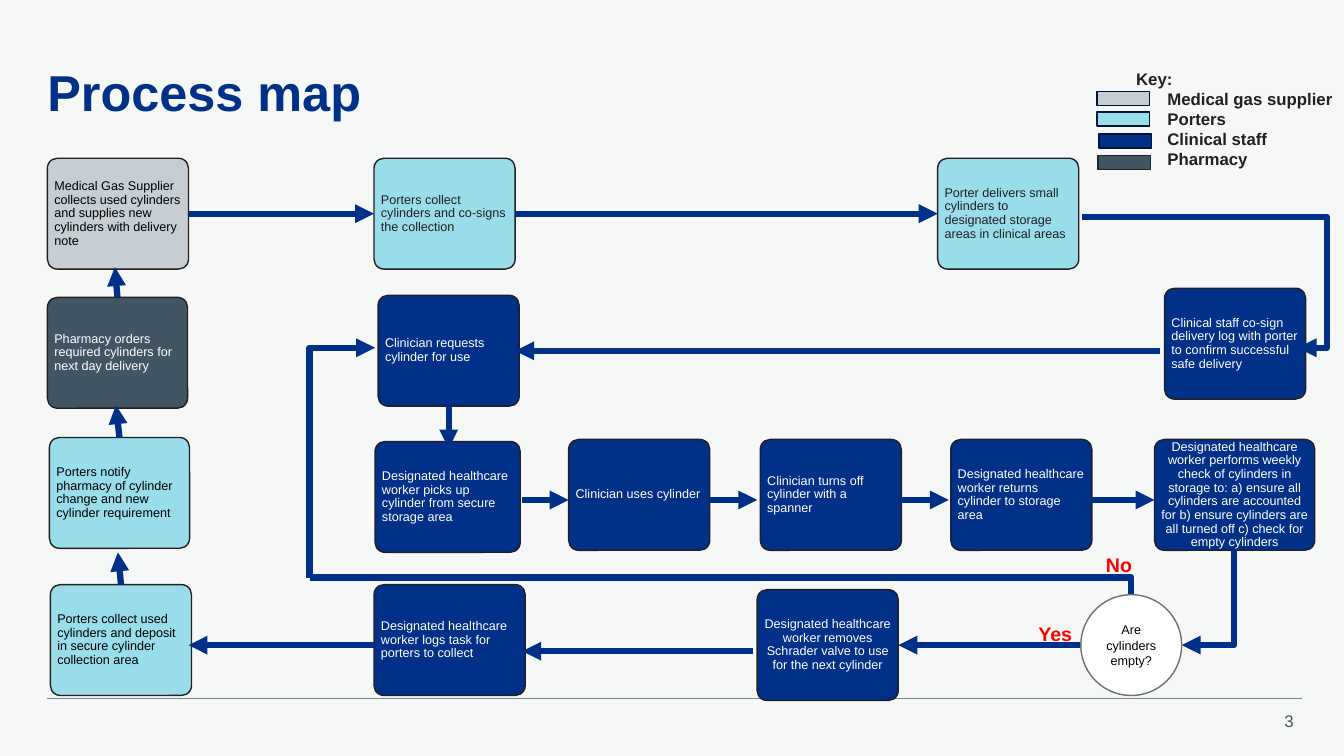
from lxml import etree
from pptx import Presentation
from pptx.dml.color import RGBColor
from pptx.enum.shapes import MSO_CONNECTOR, MSO_SHAPE
from pptx.enum.text import MSO_ANCHOR, PP_ALIGN
from pptx.oxml.ns import qn
from pptx.util import Inches, Pt

STRAIGHT, ELBOW = MSO_CONNECTOR.STRAIGHT, MSO_CONNECTOR.ELBOW
RECT, ROUNDED, OVAL = MSO_SHAPE.RECTANGLE, MSO_SHAPE.ROUNDED_RECTANGLE, MSO_SHAPE.OVAL
LEFT, CENTER, RIGHT = PP_ALIGN.LEFT, PP_ALIGN.CENTER, PP_ALIGN.RIGHT
MIDDLE = MSO_ANCHOR.MIDDLE
TOP_SIDE, LEFT_SIDE, BOTTOM_SIDE, RIGHT_SIDE = range(4)

COLORS = {
    "back": "F6F8F8", "ink": "231F20", "black": "000000", "white": "FFFFFF",
    "supplier": "C7CED3", "porter": "99DDEB", "clinical": "003087", "pharmacy": "425563",
    "rule": "768692", "ring": "707070", "answer": "FF0000",
    "swatch": "00153B", "dark_swatch": "1D252B",
}
STEP_H = 1.1

# name: (left, top, width, fill, text colour, alignment, text)
STEPS = {
    "supply": (0.47, 1.57, 1.4, "supplier", "black", LEFT,
               "Medical Gas Supplier collects used cylinders and supplies new cylinders with delivery note"),
    "collect": (3.71, 1.57, 1.4, "porter", "ink", LEFT,
                "Porters collect cylinders and co-signs the collection"),
    "deliver": (9.3, 1.57, 1.4, "porter", "ink", LEFT,
                "Porter delivers small cylinders to designated storage areas in clinical areas"),
    "cosign": (11.55, 2.86, 1.4, "clinical", "white", LEFT,
               "Clinical staff co-sign delivery log with porter to confirm successful safe delivery"),
    "request": (3.75, 2.93, 1.4, "clinical", "white", LEFT, "Clinician requests cylinder for use"),
    "pick_up": (3.72, 4.38, 1.44, "clinical", "white", LEFT,
                "Designated healthcare worker picks up cylinder from secure storage area"),
    "use": (5.64, 4.36, 1.4, "clinical", "white", LEFT, "Clinician uses cylinder"),
    "turn_off": (7.54, 4.36, 1.4, "clinical", "white", LEFT, "Clinician turns off cylinder with a spanner"),
    "return": (9.43, 4.36, 1.4, "clinical", "white", LEFT,
               "Designated healthcare worker returns cylinder to storage area"),
    "remove": (7.51, 5.85, 1.4, "clinical", "white", CENTER,
               "Designated healthcare worker removes Schrader valve to use for the next cylinder"),
    "check": (11.45, 4.36, 1.59, "clinical", "white", CENTER,
              "Designated healthcare worker performs weekly check of cylinders in storage to: "
              "a) ensure all cylinders are accounted for b) ensure cylinders are all turned off "
              "c) check for empty cylinders"),
    "log": (3.71, 5.8, 1.5, "clinical", "white", LEFT,
            "Designated healthcare worker logs task for porters to collect"),
    "deposit": (0.5, 5.8, 1.4, "porter", "black", LEFT,
                "Porters collect used cylinders and deposit in secure cylinder collection area"),
    "notify": (0.49, 4.34, 1.39, "porter", "black", LEFT,
               "Porters notify pharmacy of cylinder change and new cylinder requirement"),
    "order": (0.47, 2.95, 1.39, "pharmacy", "white", LEFT,
              "Pharmacy orders required cylinders for next day delivery"),
}

# Each end is a point, or a step and the side it joins
ARROWS = [
    (("supply", RIGHT_SIDE), ("collect", LEFT_SIDE)),
    (("collect", RIGHT_SIDE), ("deliver", LEFT_SIDE)),
    ((11.51, 3.48), (5.11, 3.48)),
    (("request", BOTTOM_SIDE), (4.45, 4.45)),
    ((5.18, 4.96), (5.64, 4.96)),
    ((7.04, 4.96), (7.51, 4.96)),
    ((8.94, 4.96), (9.41, 4.96)),
    ((10.83, 4.96), (11.45, 4.96)),
    ((10.72, 6.4), ("remove", RIGHT_SIDE)),
    ((7.47, 6.46), (5.18, 6.46)),
    ((3.72, 6.4), (1.87, 6.4)),
    (("deposit", TOP_SIDE), (1.17, 5.48)),
    (("notify", TOP_SIDE), (1.15, 4.02)),
    (("order", TOP_SIDE), (1.14, 2.65)),
]

# (start, end, preset, bend, arrow end); each leaves its start horizontally
ELBOWS = [
    ((10.73, 2.15), (12.87, 3.45), "bentConnector3", 113600, "tailEnd"),
    ((11.72, 6.4), (12.24, 5.46), "bentConnector2", None, "headEnd"),
    ((3.07, 5.73), (11.22, 5.9), "bentConnector2", None, None),
    ((3.72, 3.45), (3.07, 5.73), "bentConnector2", None, "headEnd"),
]
KEY = [("Medical gas supplier", "supplier", 0, 0), ("Porters", "porter", 0, 0.2),
       ("Clinical staff", "clinical", 0.02, 0.42), ("Pharmacy", "pharmacy", 0.01, 0.63)]


def rgb(name):
    return RGBColor.from_string(COLORS[name])


def add_run(p, text, size, color, bold=False):
    r = p.add_run()
    r.text = text
    r.font.name, r.font.size, r.font.bold = "Arial", Pt(size), bold
    r.font.color.rgb = rgb(color)


def add_box(s, preset, box, fill, line):
    sp = s.shapes.add_shape(preset, *map(Inches, box))
    sp.shadow.inherit = False
    sp.fill.solid()
    sp.fill.fore_color.rgb = rgb(fill)
    sp.line.color.rgb = rgb(line)
    sp.line.width = Pt(1)
    return sp


def add_text(s, box, text, size, color, align=LEFT, bold=False):
    tf = s.shapes.add_textbox(*map(Inches, box)).text_frame
    tf.word_wrap = False
    tf.paragraphs[0].alignment = align
    add_run(tf.paragraphs[0], text, size, color, bold)
    return tf


def add_line(s, start, end, kind=STRAIGHT, color="clinical", width=4.5, arrow=None):
    c = s.shapes.add_connector(kind, *map(Inches, start + end))
    c.line.color.rgb = rgb(color)
    c.line.width = Pt(width)
    if arrow:
        etree.SubElement(c.line._get_or_add_ln(), qn("a:" + arrow), type="triangle")
    etree.SubElement(c._element.spPr, qn("a:effectLst"))
    return c


def add_title(s, box):
    sp = s.shapes.title
    sp.left, sp.top, sp.width, sp.height = map(Inches, box)
    tf = sp.text_frame
    tf.margin_left = tf.margin_right = tf.margin_top = tf.margin_bottom = 0
    tf.vertical_anchor = MIDDLE
    p = tf.paragraphs[0]
    p.alignment, p.line_spacing = LEFT, 0.9
    add_run(p, "Process map", 36, "clinical", True)


def add_footer(s, box):
    x, y, w, h = box
    add_line(s, (x, y), (x + w, y), color="rule", width=0.5)
    add_text(s, (x + w - 0.39, y + 0.07, 0.41, h), "3", 12, "pharmacy", RIGHT)


def add_step(s, box, fill, color, align, text):
    sp = add_box(s, ROUNDED, box, fill, "ink")
    sp.adjustments[0] = 0.09
    tf = sp.text_frame
    tf.word_wrap = True
    # The rounded corners add a little to each margin
    tf.margin_left = tf.margin_right = tf.margin_top = tf.margin_bottom = Inches(0.04)
    tf.vertical_anchor = MIDDLE
    p = tf.paragraphs[0]
    p.alignment, p.line_spacing = align, 0.9
    add_run(p, text, 9, color)
    return sp


def add_decision(s, box):
    tf = add_box(s, OVAL, box, "white", "ring").text_frame
    tf.word_wrap = True
    tf.vertical_anchor = MIDDLE
    tf.paragraphs[0].alignment = CENTER
    add_run(tf.paragraphs[0], "Are cylinders empty?", 9, "black")
    x, y, w, h = box
    add_text(s, (x - 0.52, y + 0.22, 0.54, 0.34), "Yes", 14, "answer", bold=True)
    add_text(s, (x + 0.15, y - 0.46, 0.46, 0.34), "No", 14, "answer", bold=True)


def add_arrows(s, steps):
    for start, end in ARROWS:
        joins = [e if e[0] in steps else None for e in (start, end)]
        points = [(0, 0) if j else e for j, e in zip(joins, (start, end))]
        c = add_line(s, *points, arrow="tailEnd")
        for join, connect in zip(joins, (c.begin_connect, c.end_connect)):
            if join:
                connect(steps[join[0]], join[1])
    for start, end, preset, bend, arrow in ELBOWS:
        c = add_line(s, start, end, ELBOW, arrow=arrow)
        geom = c._element.spPr.find(qn("a:prstGeom"))
        geom.set("prst", preset)
        if bend:
            etree.SubElement(geom.find(qn("a:avLst")), qn("a:gd"), name="adj1", fmla=f"val {bend}")


def add_key(s, box):
    x, y, w, h = box
    tf = add_text(s, (x + 0.29, y, w - 0.29, h), "Key:", 12, "ink", bold=True)
    for label, fill, dx, dy in KEY:
        p = tf.add_paragraph()
        pPr = p._p.get_or_add_pPr()
        pPr.set("marL", str(Inches(0.31)))
        pPr.set("indent", str(-Inches(0.31)))
        etree.SubElement(pPr, qn("a:buFont"), typeface="Arial")
        etree.SubElement(pPr, qn("a:buChar"), char="•")
        add_run(p, label, 12, "ink", True)
        line = "dark_swatch" if fill == "pharmacy" else "swatch"
        add_box(s, RECT, (x + dx, y + 0.28 + dy, 0.52, 0.14), fill, line)


def main():
    prs = Presentation()
    prs.slide_width, prs.slide_height = Inches(13.33), Inches(7.5)
    s = prs.slides.add_slide(prs.slide_layouts[5])
    s.background.fill.solid()
    s.background.fill.fore_color.rgb = rgb("back")
    add_footer(s, (0.47, 6.93, 12.44, 0.3))
    add_title(s, (0.47, 0.47, 12.47, 0.95))
    steps = {name: add_step(s, (x, y, w, STEP_H), *style)
             for name, (x, y, w, *style) in STEPS.items()}
    add_arrows(s, steps)
    add_decision(s, (10.72, 5.9, 1, 1))
    add_key(s, (10.88, 0.63, 2.45, 1.41))
    prs.save("out.pptx")


if __name__ == "__main__":
    main()
